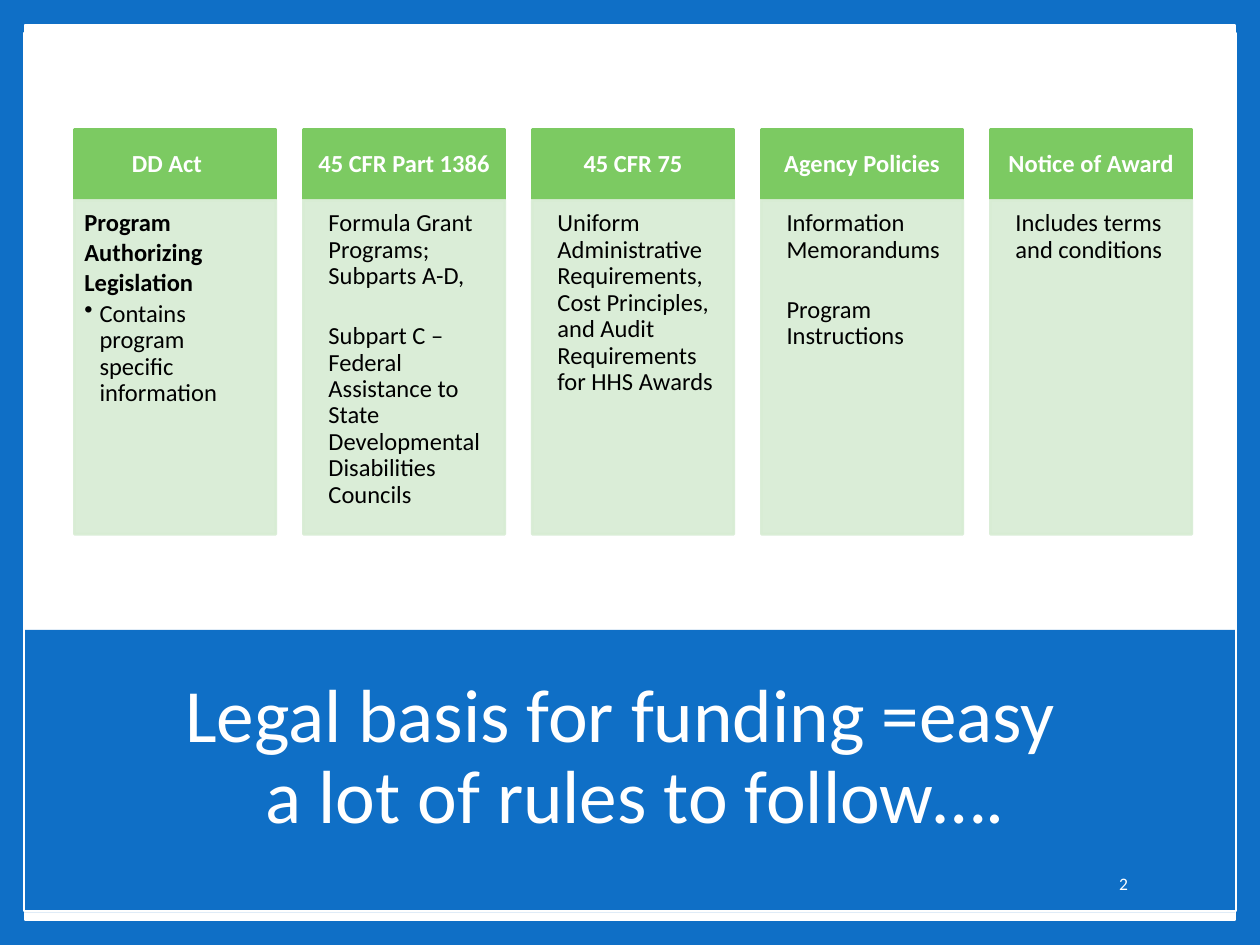
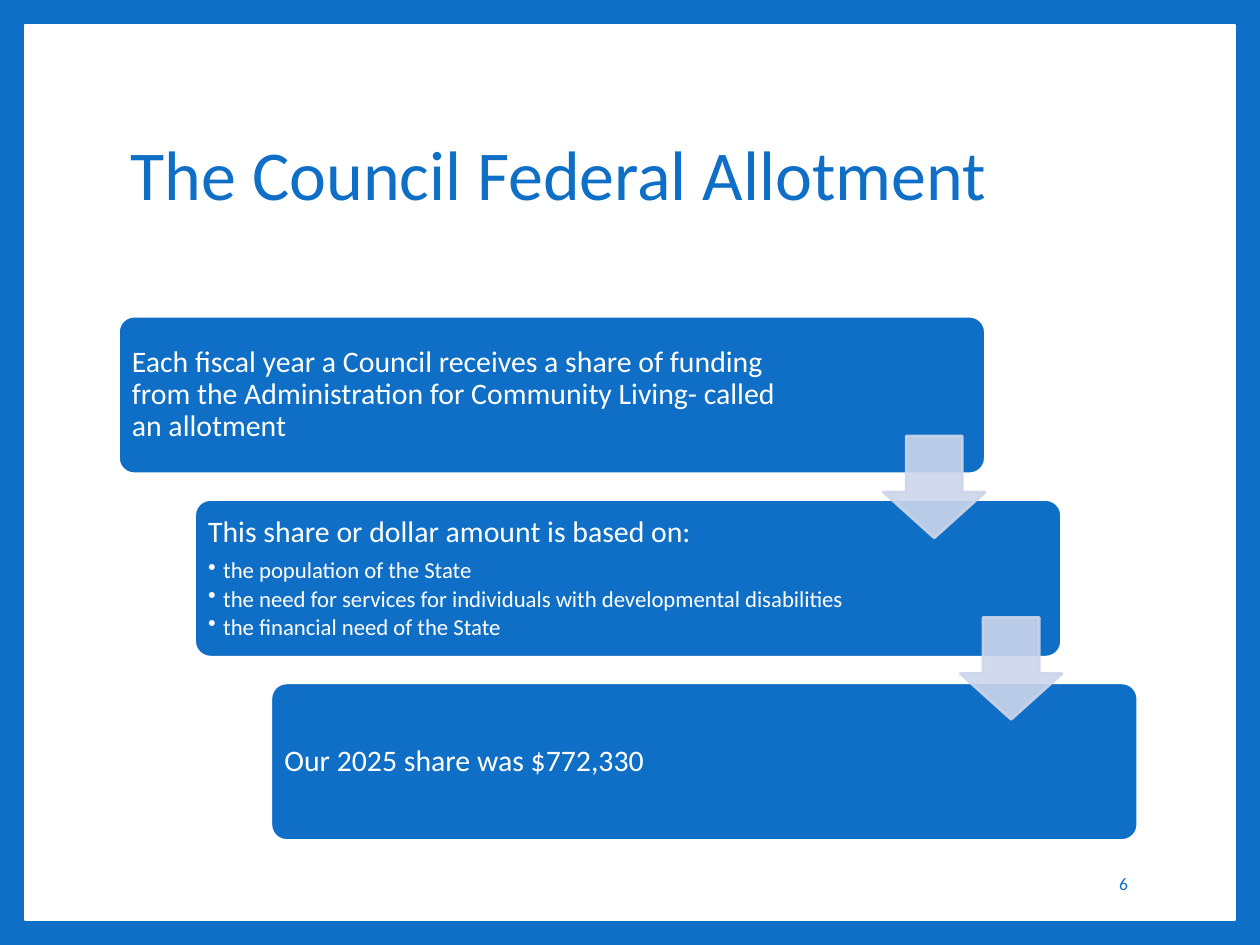
import pptx
import pptx.util
import pptx.dml.color
import pptx.enum.shapes
import pptx.enum.text
import pptx.oxml
import pptx.oxml.ns

Inches, Pt = pptx.util.Inches, pptx.util.Pt
RGBColor = pptx.dml.color.RGBColor
SHAPE = pptx.enum.shapes.MSO_SHAPE
ALIGN = pptx.enum.text.PP_ALIGN
ANCHOR = pptx.enum.text.MSO_ANCHOR
qn = pptx.oxml.ns.qn

# Shared look
FONT = "Calibri"
BLUE = RGBColor(0x0F, 0x6F, 0xC6)
WHITE = RGBColor(0xFF, 0xFF, 0xFF)
BLACK = RGBColor(0x00, 0x00, 0x00)
GREEN = RGBColor(0x7C, 0xCA, 0x62)
PALE_GREEN = RGBColor(0xD7, 0xEC, 0xD3)
PALE_BLUE = RGBColor(0xCC, 0xD5, 0xEA)
MARGINS = (0.1, 0.05, 0.1, 0.05)
HANG = 0.12

# Content: each column has a header, header options and (text, options) paragraphs
SHIFT_LEFT = dict(right=0.13)
BOLD = dict(bold=True)
BODY = dict(left=HANG)
NEW_TOPIC = dict(left=HANG, before=17)
BULLET = dict(left=HANG, first=-HANG, bullet=True)

COLUMNS = [
    ("DD Act", SHIFT_LEFT, [
        ("Program", BOLD), ("Authorizing", BOLD), ("Legislation", BOLD),
        ("Contains program specific information", BULLET)]),
    ("45 CFR Part 1386", {}, [
        ("Formula Grant Programs; Subparts A-D,", BODY),
        ("Subpart C – Federal Assistance to State Developmental "
         "Disabilities Councils", NEW_TOPIC)]),
    ("45 CFR 75", {}, [
        ("Uniform Administrative Requirements, Cost Principles, and Audit "
         "Requirements for HHS Awards", BODY)]),
    ("Agency Policies", {}, [
        ("Information Memorandums", BODY),
        ("Program Instructions", NEW_TOPIC)]),
    ("Notice of Award", {}, [("Includes terms and conditions", BODY)]),
]

STEPS = [
    ("Each fiscal year a Council receives a share of funding from the "
     "Administration for Community Living- called an allotment", []),
    ("This share or dollar amount is based on:", [
        "the population of the State",
        "the need for services for individuals with developmental disabilities",
        "the financial need of the State"]),
    ("Our 2025 share was $772,330", []),
]


def set_frame(sp, anchor=ANCHOR.MIDDLE, margins=MARGINS):
    tf = sp.text_frame
    tf.word_wrap = True
    tf.vertical_anchor = anchor
    (tf.margin_left, tf.margin_top,
     tf.margin_right, tf.margin_bottom) = map(Inches, margins)
    return tf


def add_text(tf, text, size=14, color=BLACK, bold=False, align=ALIGN.LEFT,
             spacing=0.9, before=0, after=0, left=0, right=0, first=0,
             bullet=False):
    """Write one paragraph, reusing the first one while it is empty."""
    p = tf.paragraphs[0] if not tf.text else tf.add_paragraph()
    p.alignment = align
    p.line_spacing = spacing
    p.space_before, p.space_after = Pt(before), Pt(after)
    ppr = p._p.get_or_add_pPr()
    for name, length in (("marL", left), ("marR", right), ("indent", first)):
        ppr.set(name, str(int(Inches(length))))
    if bullet:
        ppr.append(pptx.oxml.parse_xml(
            '<a:buChar xmlns:a="http://schemas.openxmlformats.org/'
            'drawingml/2006/main" char="•"/>'))
    r = p.add_run()
    r.text = text
    r.font.name, r.font.size, r.font.bold = FONT, Pt(size), bold
    r.font.color.rgb = color


def add_box(s, x, y, w, h, fill=None, line=None, width=1.5,
            kind=SHAPE.RECTANGLE, adjust=(), opacity=None):
    sp = s.shapes.add_shape(kind, Inches(x), Inches(y), Inches(w), Inches(h))
    sp.shadow.inherit = False
    for i, value in enumerate(adjust):
        sp.adjustments[i] = value
    if fill is None:
        sp.fill.background()
    else:
        sp.fill.solid()
        sp.fill.fore_color.rgb = fill
    if line is None:
        sp.line.fill.background()
    else:
        sp.line.color.rgb = line
        sp.line.width = Pt(width)
    if opacity is not None:
        for clr in sp._element.spPr.iter(qn("a:srgbClr")):
            alpha = clr.makeelement(qn("a:alpha"), {"val": str(opacity * 1000)})
            clr.append(alpha)
    return sp


def add_text_box(s, x, y, w, h):
    return set_frame(s.shapes.add_textbox(
        Inches(x), Inches(y), Inches(w), Inches(h)))


def add_framed_slide(prs):
    s = prs.slides.add_slide(prs.slide_layouts[6])
    s.background.fill.solid()
    s.background.fill.fore_color.rgb = BLUE
    add_box(s, 0.2, 0.2, 9.6, 7.1, fill=WHITE, line=WHITE, width=1)
    return s


def add_title(s, y):
    return add_text_box(s, 0.94, y, 8.1, 1.48)


def add_page_number(s, number, color):
    tf = add_text_box(s, 7.65, 6.81, 1.4, 0.4)
    add_text(tf, number, size=10, color=color, align=ALIGN.RIGHT,
             spacing=1.0, after=6)


def add_column(s, x, header, header_format, paragraphs):
    sp = add_box(s, x, 1.03, 1.6, 0.55, fill=GREEN, line=GREEN)
    tf = set_frame(sp, margins=(0.11, 0.06, 0.11, 0.06))
    add_text(tf, header, color=WHITE, bold=True, align=ALIGN.CENTER,
             **header_format)
    sp = add_box(s, x, 1.59, 1.6, 2.65, fill=PALE_GREEN, line=PALE_GREEN,
                 opacity=90)
    tf = set_frame(sp, ANCHOR.TOP, (0.08, 0.08, 0.11, 0.12))
    for text, text_format in paragraphs:
        add_text(tf, text, after=2.1, **text_format)


def add_step(s, x, y, heading, bullets):
    sp = add_box(s, x, y, 6.88, 1.25, fill=BLUE, line=WHITE,
                 kind=SHAPE.ROUNDED_RECTANGLE, adjust=[0.1])
    tf = set_frame(sp, margins=(0.07, 0.11, 1.48, 0.11))
    add_text(tf, heading, size=17, color=WHITE, after=6)
    for text in bullets:
        add_text(tf, text, size=13, color=WHITE, after=2, **BULLET)


def add_step_arrow(s, x, y):
    add_box(s, x, y, 0.81, 0.81, fill=PALE_BLUE, line=PALE_BLUE,
            kind=SHAPE.DOWN_ARROW, adjust=[0.55, 0.45], opacity=90)


def build_legal_basis(prs):
    s = add_framed_slide(prs)
    # Title band
    add_box(s, 0.19, 5, 9.61, 2.24, fill=BLUE)
    tf = add_title(s, 5.28)
    title = dict(size=43, color=WHITE, align=ALIGN.CENTER)
    add_text(tf, "Legal basis for funding =easy", right=0.14, **title)
    add_text(tf, "a lot of rules to follow….", left=0.1, **title)
    add_page_number(s, "2", WHITE)
    add_box(s, 0.19, 0.26, 9.62, 6.97, line=WHITE, width=1)
    # Five sources of rules
    for i, column in enumerate(COLUMNS):
        add_column(s, 0.59 + 1.8175 * i, *column)


def build_allotment(prs):
    s = add_framed_slide(prs)
    add_text(add_title(s, 0.67), "The Council Federal Allotment",
             size=40, color=BLUE)
    add_page_number(s, "6", BLUE)
    # Staircase of steps, then the arrows over their edges
    for i, step in enumerate(STEPS):
        add_step(s, 0.94 + 0.605 * i, 2.51 + 1.455 * i, *step)
    for i in range(len(STEPS) - 1):
        add_step_arrow(s, 7.01 + 0.61 * i, 3.46 + 1.44 * i)


def main():
    prs = pptx.Presentation()
    prs.slide_width, prs.slide_height = Inches(10), Inches(7.5)
    build_legal_basis(prs)
    build_allotment(prs)
    prs.save("out.pptx")


if __name__ == "__main__":
    main()
